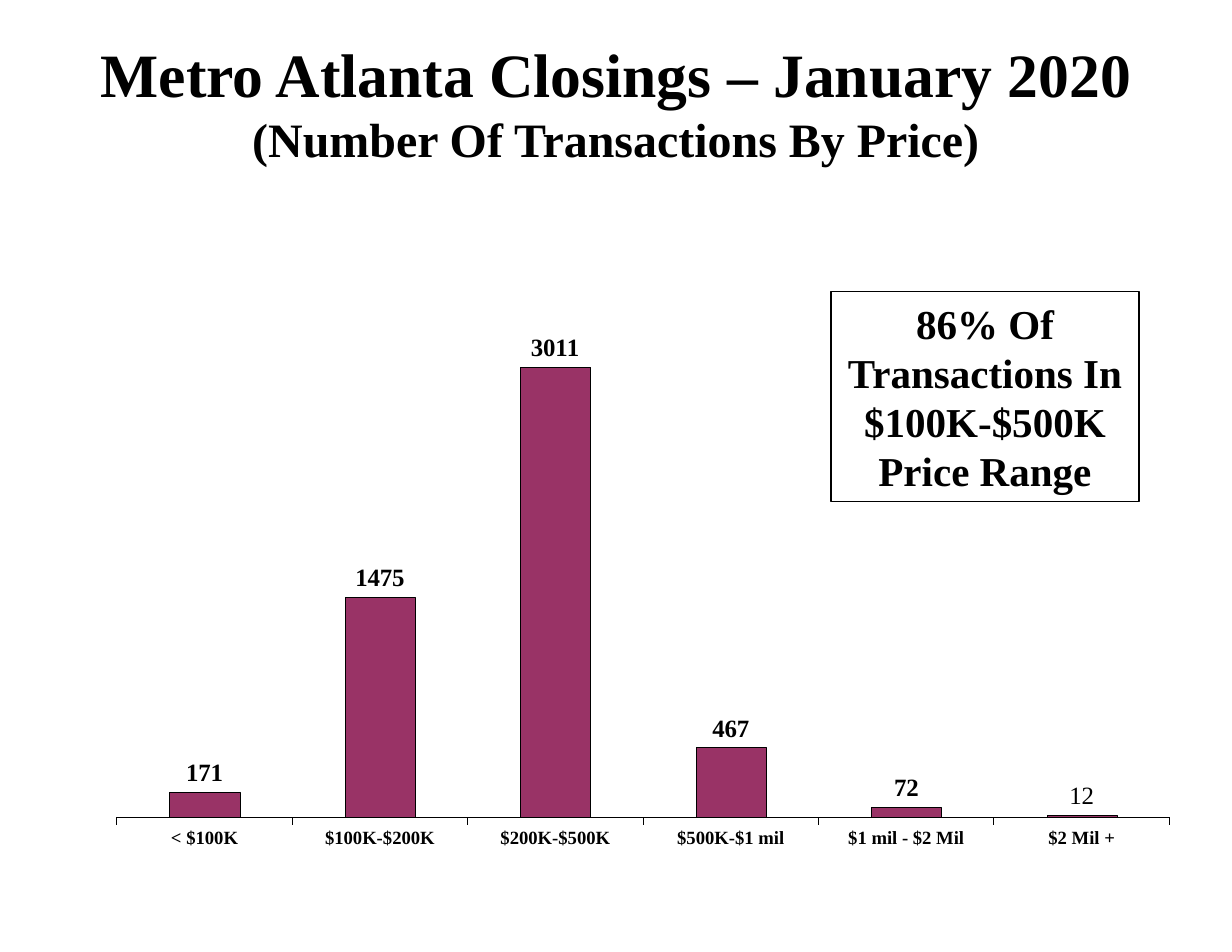
from dataclasses import dataclass
from typing import Any, Optional

from pptx import Presentation
from pptx.chart.data import CategoryChartData
from pptx.dml.color import RGBColor
from pptx.enum.chart import XL_CHART_TYPE, XL_LABEL_POSITION, XL_TICK_LABEL_POSITION, XL_TICK_MARK
from pptx.enum.text import MSO_ANCHOR, PP_ALIGN
from pptx.oxml import parse_xml
from pptx.oxml.ns import nsdecls, qn
from pptx.util import Inches, Pt

COLORS = {"ink": "000000", "bar": "993366"}
FONT = "Times New Roman"
WIDTH, HEIGHT = Inches(11), Inches(8.5)
PLOT_AREA = {"x": 0.03, "y": 0.13, "w": 0.96, "h": 0.78}
PRICE_COUNTS = {
    "< $100K": 171,
    "$100K-$200K": 1475,
    "$200K-$500K": 3011,
    "$500K-$1 mil": 467,
    "$1 mil - $2 Mil": 72,
    "$2 Mil +": 17,
}


@dataclass(frozen=True)
class Area:
    left: float
    top: float
    width: float
    height: float

    def lengths(self) -> tuple[int, int, int, int]:
        return (round(self.left * WIDTH), round(self.top * HEIGHT),
                round(self.width * WIDTH), round(self.height * HEIGHT))


@dataclass(frozen=True)
class TextBlock:
    area: Area
    lines: tuple[tuple[str, float], ...]
    border: Optional[float] = None


CHART_AREA = Area(0.75 / 11, 1.84 / 8.5, 0.89, 6 / 8.5)
TEXT_BLOCKS = (
    TextBlock(Area(0, 0.08, 1, 0.054), (
        ("Metro Atlanta Closings – January 2020", 39.6),
        ("(Number Of Transactions By Price)", 30.8),
    )),
    TextBlock(Area(7.42 / 11, 2.6 / 8.5, 0.25, 1.88 / 8.5), (
        ("86% Of Transactions In $100K-$500K Price Range", 26.4),
    ), 0.75),
)


def apply(target: Any, values: dict[str, Any]) -> None:
    for name, value in values.items():
        setattr(target, name, value)


def style_font(font: Any, size: float, bold: bool = True) -> None:
    apply(font, {"name": FONT, "size": Pt(size), "bold": bold})
    font.color.rgb = RGBColor.from_string(COLORS["ink"])


def style_line(line: Any, width: float) -> None:
    line.color.rgb = RGBColor.from_string(COLORS["ink"])
    line.width = Pt(width)


def draw_text(page: Any, block: TextBlock) -> None:
    box = page.shapes.add_textbox(*block.area.lengths())
    apply(box.text_frame, {"word_wrap": True, "vertical_anchor": MSO_ANCHOR.MIDDLE})
    if block.border:
        style_line(box.line, block.border)
    para = box.text_frame.paragraphs[0]
    para.alignment = PP_ALIGN.CENTER
    for index, (text, size) in enumerate(block.lines):
        if index:
            para.add_line_break()
        span = para.add_run()
        span.text = text
        style_font(span.font, size)


def place_plot(chart: Any) -> None:
    plot_area = chart._chartSpace.chart.plotArea
    for layout in plot_area.findall(qn("c:layout")):
        plot_area.remove(layout)
    sizes = "".join(f'<c:{key} val="{share}"/>' for key, share in PLOT_AREA.items())
    plot_area.insert(0, parse_xml(
        f'<c:layout {nsdecls("c")}><c:manualLayout><c:layoutTarget val="inner"/>'
        f'<c:xMode val="edge"/><c:yMode val="edge"/>{sizes}</c:manualLayout></c:layout>'))


def draw_chart(page: Any) -> None:
    data = CategoryChartData(number_format="0")
    data.categories = list(PRICE_COUNTS)
    data.add_series("Series 1", list(PRICE_COUNTS.values()))
    chart = page.shapes.add_chart(
        XL_CHART_TYPE.COLUMN_CLUSTERED, *CHART_AREA.lengths(), data).chart
    apply(chart, {"has_legend": False, "has_title": False})
    style_font(chart.font, 12)
    place_plot(chart)

    apply(chart.value_axis, {"minimum_scale": 0, "maximum_scale": 3500,
                             "has_major_gridlines": False, "visible": False})
    axis = chart.category_axis
    apply(axis, {"major_tick_mark": XL_TICK_MARK.OUTSIDE,
                 "tick_label_position": XL_TICK_LABEL_POSITION.LOW})
    style_font(axis.tick_labels.font, 12)
    style_line(axis.format.line, 0.01)

    plot = chart.plots[0]
    apply(plot, {"gap_width": 150, "vary_by_categories": False})
    series = plot.series[0]
    series.format.fill.solid()
    series.format.fill.fore_color.rgb = RGBColor.from_string(COLORS["bar"])
    style_line(series.format.line, 0.06)

    labels = series.data_labels
    apply(labels, {"show_value": True, "number_format": "0",
                   "number_format_is_linked": False,
                   "position": XL_LABEL_POSITION.OUTSIDE_END})
    style_font(labels.font, 16)
    last_label = series.points[len(PRICE_COUNTS) - 1].data_label
    span = last_label.text_frame.paragraphs[0].add_run()
    span.text = "12"
    style_font(span.font, 16, bold=False)
    last_label.position = XL_LABEL_POSITION.OUTSIDE_END


def main() -> None:
    deck = Presentation()
    apply(deck, {"slide_width": WIDTH, "slide_height": HEIGHT})
    page = deck.slides.add_slide(deck.slide_layouts[6])
    draw_chart(page)
    for block in TEXT_BLOCKS:
        draw_text(page, block)
    deck.save("out.pptx")


if __name__ == "__main__":
    main()
